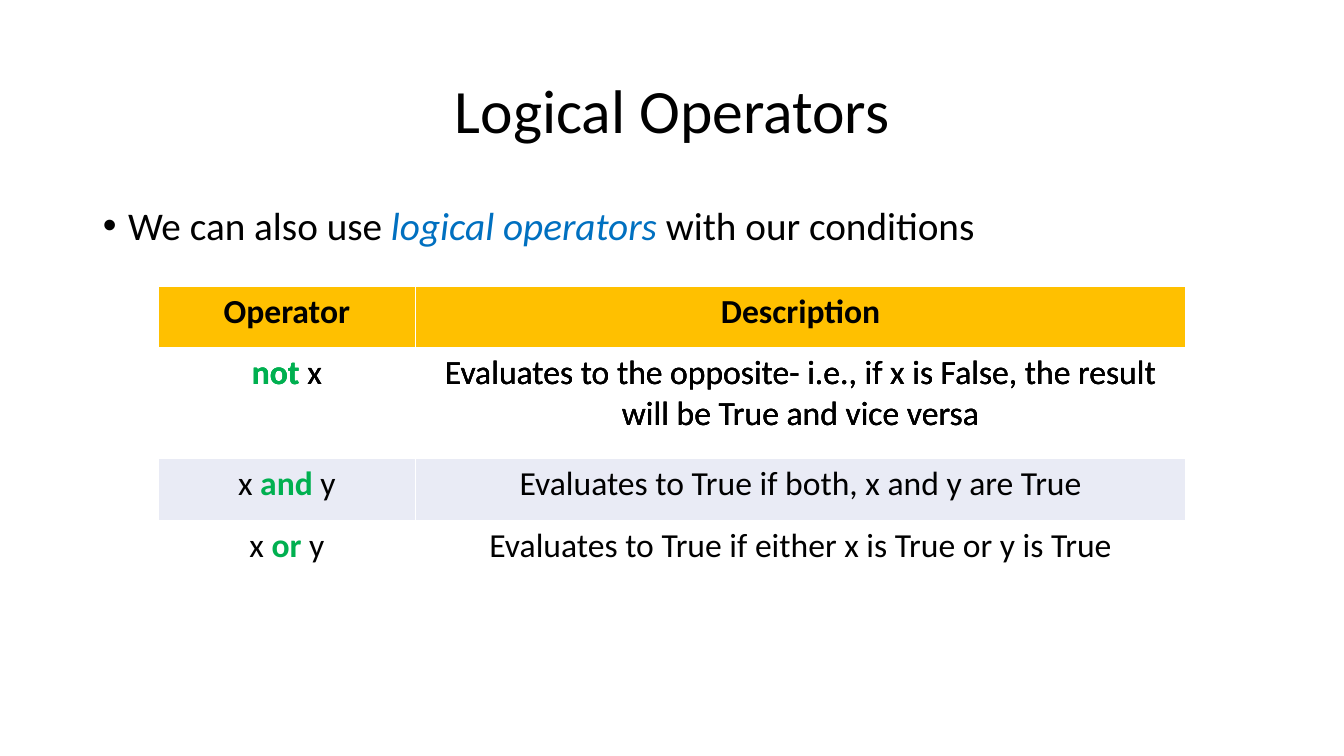
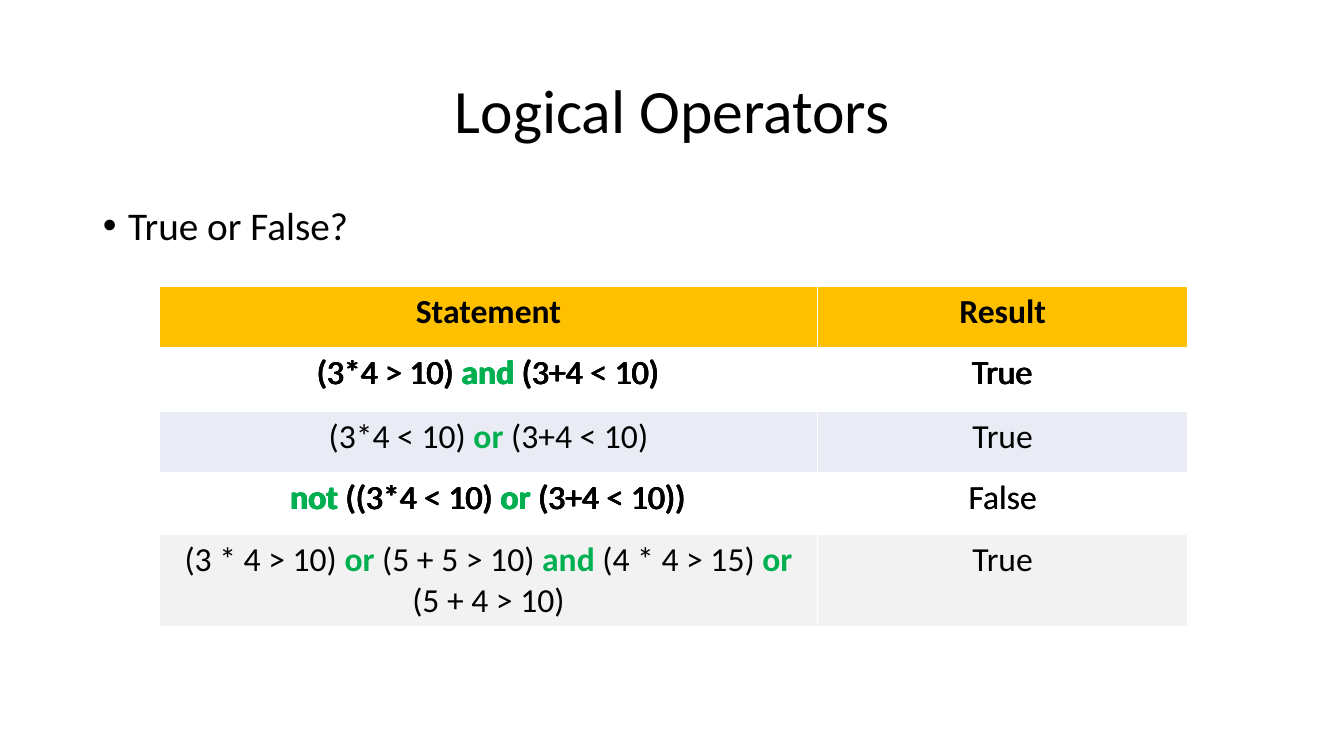
"""Build two slides on logical operators, whose tables are revealed row by row."""
from pptx import Presentation
from pptx.dml.color import RGBColor
from pptx.enum.text import MSO_ANCHOR, PP_ALIGN
from pptx.util import Inches, Pt

CENTER = PP_ALIGN.CENTER
MIDDLE = MSO_ANCHOR.MIDDLE

BLACK = RGBColor(0x00, 0x00, 0x00)
WHITE = RGBColor(0xFF, 0xFF, 0xFF)
BLUE = RGBColor(0x00, 0x70, 0xC0)
GREEN = RGBColor(0x00, 0xB0, 0x50)
GOLD = RGBColor(0xFF, 0xC0, 0x00)
LAVENDER = RGBColor(0xE9, 0xEB, 0xF5)
GRAY = RGBColor(0xF2, 0xF2, 0xF2)

FONT = "Calibri"
MARK = "`"
TITLE = "Logical Operators"
TITLE_BOX = (0.92, 0.4, 11.5, 1.45)
BODY_BOX = (0.92, 2, 11.64, 5.32)
TABLE_TOP = 2.84
ROW_HEIGHT = 0.61

SLIDES = [
    {
        "bullet": "We can also use `logical operators `with our conditions",
        "reveal": "rows",
        "lefts": (1.57, 1.57, 1.57),
        "first_stage": 1,
        "columns": (2.55, 7.64),
        "height": 2.95,
        "heights": {1: 1.1},
        "fills": {0: GOLD, 2: LAVENDER},
        "rows": [
            ("Operator", "Description"),
            ("`not` x", "Evaluates to the opposite- i.e., if x is False, "
                        "the result will be True and vice versa"),
            ("x `and` y", "Evaluates to True if both, x and y are True"),
            ("x `or` y", "Evaluates to True if either x is True or y is True"),
        ],
    },
    {
        "bullet": "True or False?",
        "reveal": "results",
        "lefts": (1.57, 1.57, 1.57, 1.58, 1.58),
        "first_stage": 0,
        "columns": (6.53, 3.67),
        "height": 3.37,
        "heights": {1: 0.63},
        "fills": {0: GOLD, 2: LAVENDER, 4: GRAY},
        "rows": [
            ("Statement", "Result"),
            ("(3*4 > 10) `and` (3+4 < 10)", "True"),
            ("(3*4 < 10) `or` (3+4 < 10)", "True"),
            ("`not` ((3*4 < 10) `or` (3+4 < 10))", "False"),
            ("(3 * 4 > 10) `or `(5 + 5 > 10) `and` (4 * 4 > 15) `or` "
             "(5 + 4 > 10)", "True"),
        ],
    },
]


def place(shape, box):
    """Move and size a shape, in inches."""
    shape.left, shape.top, shape.width, shape.height = map(Inches, box)


def write(para, text, size, color=BLACK, accent=GREEN, bold=False,
          italic_accent=False):
    """Write text whose marked parts take the accent colour and style."""
    for index, part in enumerate(text.split(MARK)):
        if not part:
            continue
        marked = index % 2 == 1
        span = para.add_run()
        span.text = part
        span.font.name = FONT
        span.font.size = Pt(size)
        span.font.color.rgb = accent if marked else color
        span.font.bold = bold or (marked and not italic_accent)
        span.font.italic = marked and italic_accent


def add_title(page):
    frame = page.shapes.title.text_frame
    frame.vertical_anchor = MIDDLE
    para = frame.paragraphs[0]
    para.alignment = CENTER
    para.line_spacing = 0.9
    write(para, TITLE, 44)


def add_bullet(page, text):
    para = page.placeholders[1].text_frame.paragraphs[0]
    para.line_spacing = 0.9
    para.space_before = Pt(10)
    indent = Inches(0.25)
    properties = para._p.get_or_add_pPr()
    properties.set("marL", str(indent))
    properties.set("indent", str(-indent))
    write(para, text, 28, accent=BLUE, italic_accent=True)


def fill_cell(cell, color):
    if color is None:
        cell.fill.background()
    else:
        cell.fill.solid()
        cell.fill.fore_color.rgb = color


def add_stage(page, content, left, stage):
    """Add the table as it stands once rows up to the stage are revealed."""
    rows, columns = content["rows"], content["columns"]
    box = (left, TABLE_TOP, sum(columns), content["height"])
    graphic = page.shapes.add_table(
        len(rows), len(columns), *map(Inches, box))
    table = graphic.table
    table.horz_banding = False
    for column, width in zip(table.columns, columns):
        column.width = Inches(width)
    for index, texts in enumerate(rows):
        row = table.rows[index]
        row.height = Inches(content["heights"].get(index, ROW_HEIGHT))
        pending = index > stage
        covered = pending and content["reveal"] == "rows"
        fill = content["fills"].get(index)
        if covered:
            fill = WHITE if index == stage + 1 else None
        color, accent = (WHITE, WHITE) if covered else (BLACK, GREEN)
        for position, (cell, text) in enumerate(zip(row.cells, texts)):
            fill_cell(cell, fill)
            para = cell.text_frame.paragraphs[0]
            para.alignment = CENTER
            para.font.size = Pt(24)
            if pending and not covered and position:
                continue
            write(para, text, 24, color, accent, bold=index == 0)
    graphic.height = Inches(content["height"])


def main():
    deck = Presentation()
    deck.slide_width, deck.slide_height = Inches(13.33), Inches(7.5)
    layout = deck.slide_layouts[1]
    for holder, box in zip(layout.placeholders, (TITLE_BOX, BODY_BOX)):
        place(holder, box)
    for content in SLIDES:
        page = deck.slides.add_slide(layout)
        add_title(page)
        add_bullet(page, content["bullet"])
        for stage, left in enumerate(content["lefts"], content["first_stage"]):
            add_stage(page, content, left, stage)
    deck.save("out.pptx")


if __name__ == "__main__":
    main()
